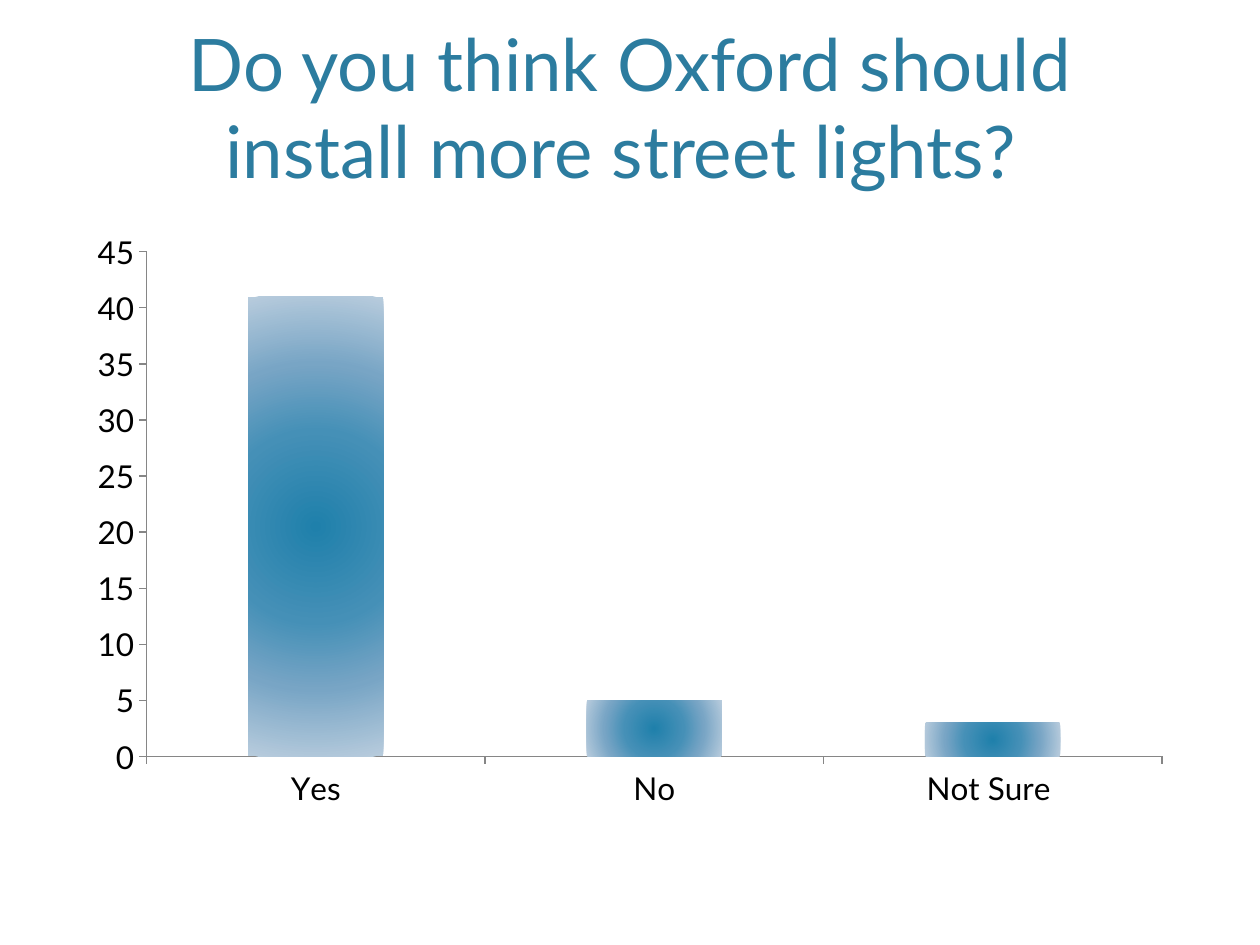
from lxml.etree import SubElement as Sub
from pptx import Presentation
from pptx.chart.data import CategoryChartData as Data
from pptx.dml.color import RGBColor
from pptx.enum.chart import XL_CHART_TYPE as Kind, XL_TICK_MARK as Tick
from pptx.enum.text import MSO_ANCHOR as Anchor, PP_ALIGN as Align
from pptx.oxml.ns import qn
from pptx.util import Cm, Pt

# Content
TITLE = "Do you think Oxford should install more street lights? "
VOTES = {"Yes": 41, "No": 5, "Not Sure ": 3}
FONT = "Lato"
# Bar gradient, from the centre outwards: percent, colour
STOPS = [(0, "1F80AB"), (40, "4590B7"), (68, "78A5C5"), (100, "B8CCDD")]

LEFT, WIDTH = Cm(1.52), Cm(22.35)


def color(code):
    return RGBColor.from_string(code)


def style(font, size, code):
    font.name, font.size = FONT, Pt(size)
    font.color.rgb = color(code)


def glow(form, stops):
    """Fill with a gradient that spreads from the centre."""
    props = form._element.get_or_add_spPr()
    grad = Sub(props, qn("a:gradFill"), rotWithShape="1")
    marks = Sub(grad, qn("a:gsLst"))
    for place, code in stops:
        mark = Sub(marks, qn("a:gs"), pos=str(place * 1000))
        Sub(mark, qn("a:srgbClr"), val=code)
    shade = Sub(grad, qn("a:path"))
    shade.set("path", "circle")
    Sub(shade, qn("a:fillToRect"), {side: "50000" for side in "ltrb"})


deck = Presentation()
deck.slide_width, deck.slide_height = Cm(25.4), Cm(19.05)
slide = deck.slides.add_slide(deck.slide_layouts[6])

# Title
box = slide.shapes.add_textbox(LEFT, Cm(0.3), WIDTH, Cm(3.71))
frame = box.text_frame
frame.word_wrap = True
frame.vertical_anchor = Anchor.BOTTOM
frame.text = TITLE
line = frame.paragraphs[0]
line.alignment = Align.CENTER
style(line.runs[0].font, 41.4, "2C7C9F")

# Chart
data = Data()
data.categories = list(VOTES)
data.add_series("Series 1", list(VOTES.values()))
chart = slide.shapes.add_chart(
    Kind.COLUMN_CLUSTERED, LEFT, Cm(4.45), WIDTH, Cm(12.06), data).chart
chart.has_legend = chart.has_title = False
style(chart.font, 18, "000000")

# Axes
for axis in (chart.category_axis, chart.value_axis):
    axis.has_major_gridlines = False
    axis.major_tick_mark = Tick.OUTSIDE
    axis.minor_tick_mark = Tick.NONE
    axis.format.line.color.rgb = color("868686")
    axis.format.line.width = Pt(0.75)
scale = chart.value_axis
scale.minimum_scale, scale.maximum_scale, scale.major_unit = 0, 45, 5

# Bars
plot = chart.plots[0]
plot.gap_width = 150
plot.vary_by_categories = False
glow(plot.series[0].format, STOPS)

deck.save("out.pptx")
